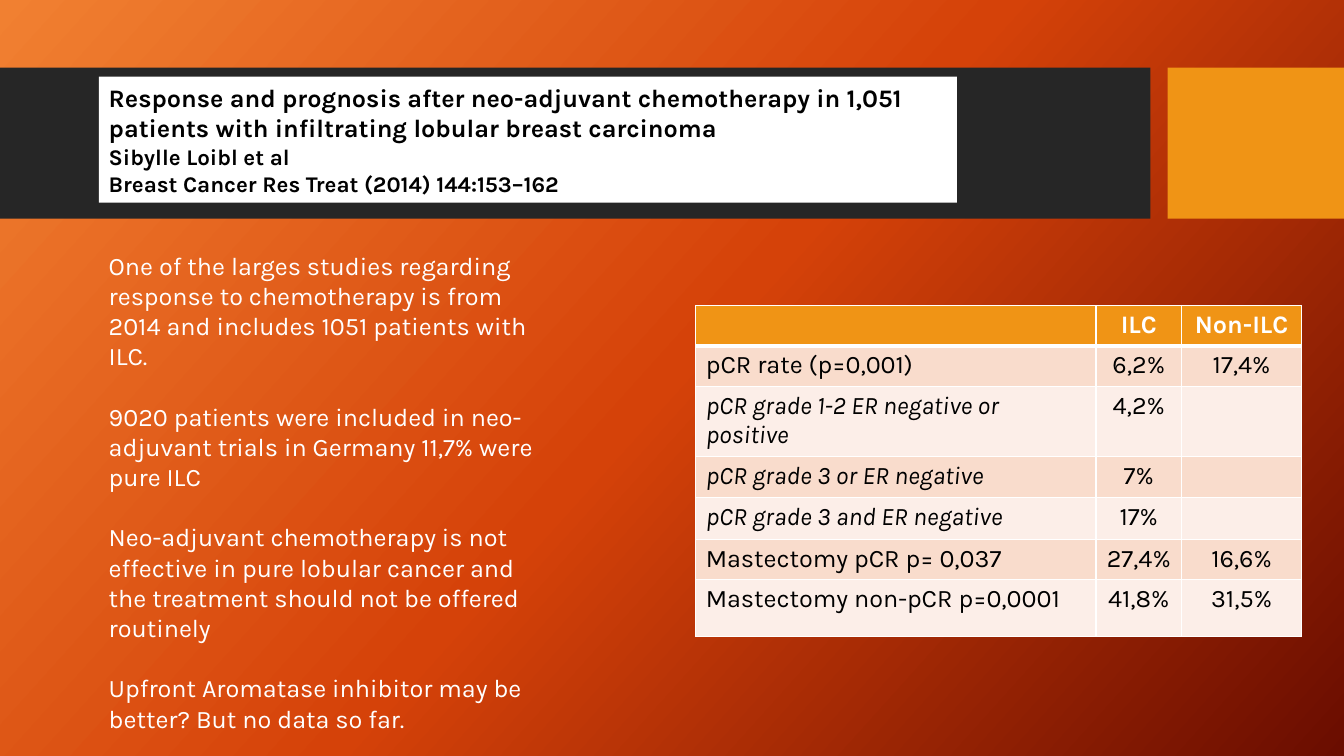
from typing import NamedTuple

from lxml import etree
from pptx import Presentation
from pptx.dml.color import RGBColor
from pptx.enum.shapes import MSO_SHAPE
from pptx.enum.text import MSO_ANCHOR, PP_ALIGN
from pptx.oxml import parse_xml
from pptx.oxml.ns import nsdecls, qn
from pptx.util import Emu, Pt

RECT = MSO_SHAPE.RECTANGLE
MIDDLE = MSO_ANCHOR.MIDDLE
LEFT, CENTER = PP_ALIGN.LEFT, PP_ALIGN.CENTER

PX = 9144  # 100 px to the inch
FONT = "Karla"
WHITE = RGBColor(0xFF, 0xFF, 0xFF)
BLACK = RGBColor(0x00, 0x00, 0x00)
CHARCOAL = RGBColor(0x26, 0x26, 0x26)
AMBER = RGBColor(0xF0, 0x94, 0x15)
PEACH = RGBColor(0xF9, 0xDC, 0xCC)
PALE_PEACH = RGBColor(0xFC, 0xEE, 0xE8)
BACKGROUND_STOPS = [
    (0, RGBColor(0xF1, 0x80, 0x31)),
    (50, RGBColor(0xD5, 0x42, 0x09)),
    (100, RGBColor(0x6A, 0x0D, 0x00)),
]
BACKGROUND_ANGLE = 42


class Box(NamedTuple):
    left: int
    top: int
    width: int
    height: int

    def emu(self) -> list[Emu]:
        return [Emu(v * PX) for v in self]


class Line(NamedTuple):
    text: str
    size: int
    before: float = 0


class Row(NamedTuple):
    height: int
    label: str
    ilc: str
    non_ilc: str
    italic: bool = False


TITLE = [
    Line("Response and prognosis after neo-adjuvant chemotherapy in 1,051 "
         "patients with infiltrating lobular breast carcinoma", 18),
    Line("Sibylle Loibl et al", 16),
    Line("Breast Cancer Res Treat (2014) 144:153–162", 16),
]
GAP = 21.5
BODY = [
    Line("One of the larges studies regarding response to chemotherapy is from "
         "2014 and includes 1051 patients with ILC.", 18),
    Line("9020 patients were included in neo-adjuvant trials in Germany 11,7% "
         "were pure ILC", 18, GAP),
    Line("Neo-adjuvant chemotherapy is not effective in pure lobular cancer and "
         "the treatment should not be offered routinely", 18, GAP),
    Line("Upfront Aromatase inhibitor may be better? But no data so far.", 18, GAP),
]
COLUMNS = [397, 85, 119]
ROWS = [
    Row(40, "", "ILC", "Non-ILC"),
    Row(40, "pCR rate (p=0,001)", "6,2%", "17,4%"),
    Row(70, "pCR grade 1-2 ER negative or positive", "4,2%", "", True),
    Row(40, "pCR grade 3 or ER negative", "7%", "", True),
    Row(42, "pCR grade 3 and ER negative", "17%", "", True),
    Row(40, "Mastectomy pCR p= 0,037", "27,4%", "16,6%"),
    Row(56, "Mastectomy non-pCR p=0,0001", "41,8%", "31,5%"),
]


def set_font(p, size: int, color: RGBColor, bold=False, italic=False) -> None:
    f = p.font
    f.name, f.size, f.bold, f.italic = FONT, Pt(size), bold, italic
    f.color.rgb = color


def set_background(s) -> None:
    """Give the slide a gradient with any number of stops."""
    fill = s.background.fill
    fill.gradient()
    fill.gradient_angle = 360 - BACKGROUND_ANGLE
    stops = next(s._element.iter(qn("a:gsLst")))
    for gs in list(stops):
        stops.remove(gs)
    for percent, color in BACKGROUND_STOPS:
        gs = etree.SubElement(stops, qn("a:gs"), pos=str(percent * 1000))
        etree.SubElement(gs, qn("a:srgbClr"), val=str(color))


def add_rect(s, box: Box, color: RGBColor):
    sp = s.shapes.add_shape(RECT, *box.emu())
    sp.shadow.inherit = False
    sp.fill.solid()
    sp.fill.fore_color.rgb = color
    sp.line.fill.background()
    return sp


def write_lines(tf, lines: list[Line], color: RGBColor, bold=False) -> None:
    tf.word_wrap = True
    for i, line in enumerate(lines):
        p = tf.add_paragraph() if i else tf.paragraphs[0]
        p.text = line.text
        p.alignment = LEFT
        if line.before:
            p.space_before = Pt(line.before)
        set_font(p, line.size, color, bold)


def set_borders(cell, bottom: int) -> None:
    """Draw white cell borders, 1 pt except for the bottom one."""
    tc_pr = cell._tc.get_or_add_tcPr()
    widths = {"lnL": 1, "lnR": 1, "lnT": 1, "lnB": bottom}
    for i, (tag, width) in enumerate(widths.items()):
        tc_pr.insert(i, parse_xml(
            f'<a:{tag} {nsdecls("a")} w="{Pt(width)}"><a:solidFill>'
            f'<a:srgbClr val="{WHITE}"/></a:solidFill></a:{tag}>'))


def add_results_table(s, left: int, top: int) -> None:
    box = Box(left, top, sum(COLUMNS), sum(row.height for row in ROWS))
    table = s.shapes.add_table(len(ROWS), len(COLUMNS), *box.emu()).table
    for column, width in zip(table.columns, COLUMNS):
        column.width = Emu(width * PX)
    for i, row in enumerate(ROWS):
        header = i == 0
        table.rows[i].height = Emu(row.height * PX)
        fill = AMBER if header else PEACH if i % 2 else PALE_PEACH
        for j, text in enumerate((row.label, row.ilc, row.non_ilc)):
            cell = table.cell(i, j)
            cell.fill.solid()
            cell.fill.fore_color.rgb = fill
            set_borders(cell, bottom=3 if header else 1)
            p = cell.text_frame.paragraphs[0]
            p.text = text
            p.alignment = CENTER if j else LEFT
            set_font(p, 18, WHITE if header else BLACK, header,
                     row.italic and j == 0)


def main() -> None:
    prs = Presentation()
    prs.slide_width, prs.slide_height = Emu(1333 * PX), Emu(750 * PX)
    s = prs.slides.add_slide(prs.slide_layouts[6])
    set_background(s)
    add_rect(s, Box(0, 67, 1141, 150), CHARCOAL)
    add_rect(s, Box(1158, 67, 175, 150), AMBER)
    body = s.shapes.add_textbox(*Box(98, 243, 458, 495).emu())
    write_lines(body.text_frame, BODY, WHITE)
    add_results_table(s, 690, 303)
    title = add_rect(s, Box(98, 76, 851, 125), WHITE)
    title.text_frame.vertical_anchor = MIDDLE
    write_lines(title.text_frame, TITLE, BLACK, bold=True)
    prs.save("out.pptx")


if __name__ == "__main__":
    main()
